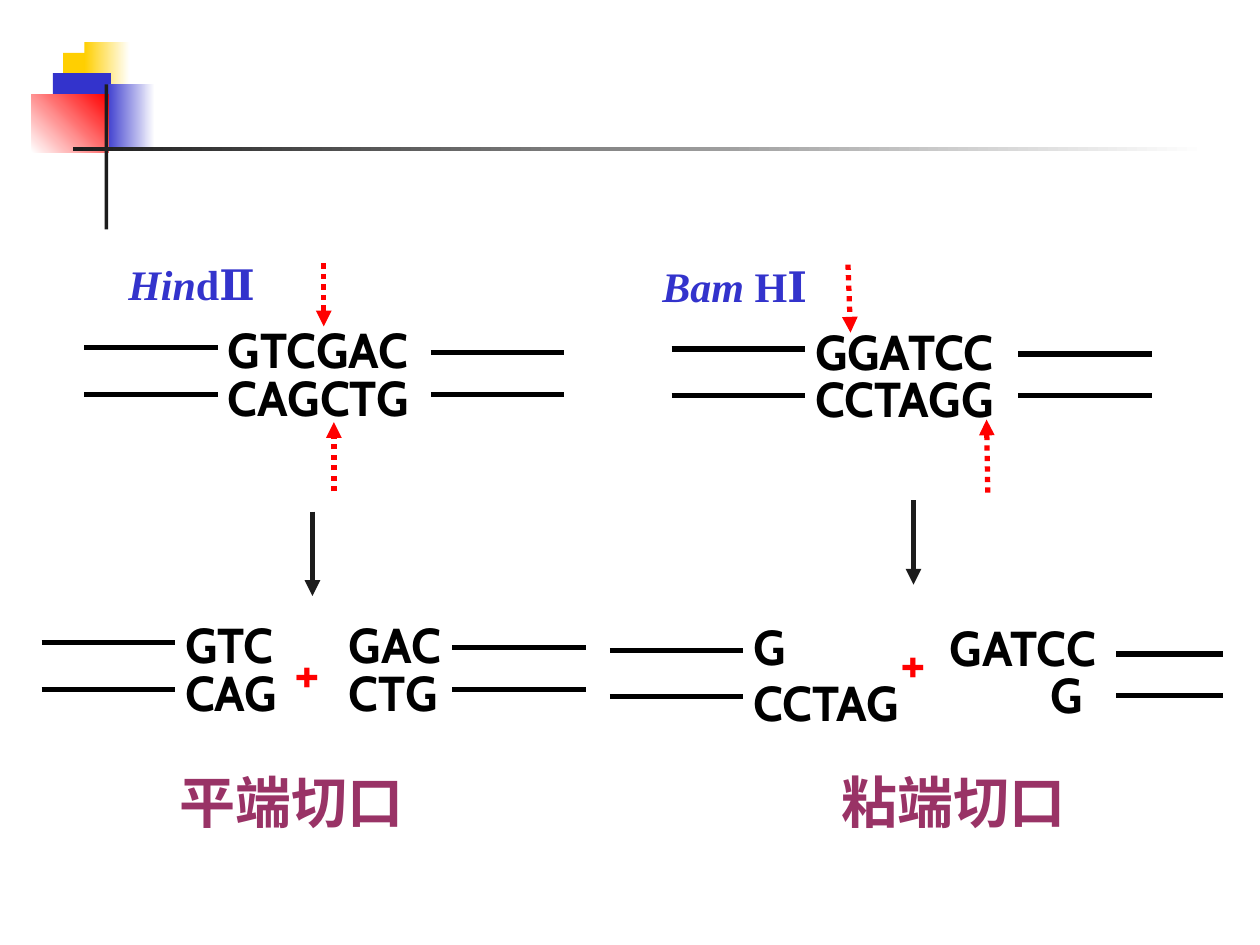
from dataclasses import dataclass
from typing import Optional

from lxml.etree import SubElement
from pptx import Presentation
from pptx.dml.color import RGBColor
from pptx.enum.dml import MSO_LINE_DASH_STYLE as Dash
from pptx.enum.shapes import MSO_CONNECTOR as Connector, MSO_SHAPE as Shape
from pptx.oxml.ns import qn
from pptx.util import Inches, Pt

COLUMNS, ROWS = 100, 75
SLIDE_WIDTH, SLIDE_HEIGHT = Inches(10), Inches(7.5)


@dataclass(frozen=True)
class Theme:
    yellow: str = "FFCF01"
    blue: str = "3333CC"
    red: str = "FF0000"
    white: str = "FFFFFF"
    dark: str = "1C1C1C"
    black: str = "000000"
    purple: str = "993366"
    serif: str = "Times New Roman"
    sequence_font: str = "Cabin"
    caption_font: str = "Noto Sans CJK JP"
    enzyme_size: int = 24
    sequence_size: int = 28
    large_size: int = 32
    line_width: int = 3


THEME = Theme()


@dataclass(frozen=True)
class Block:
    """A decorative rectangle; with an end colour it becomes a gradient."""
    left: float
    top: float
    width: float
    height: float
    color: str
    end_color: Optional[str] = None
    angle: int = 0


@dataclass(frozen=True)
class Duplex:
    """Two paired strands of bases, with bars for the DNA on either side."""
    left: float
    top: float
    width: float
    strands: tuple[str, str]
    spacing: tuple[float, float] = (1, 0.8)
    lower_indent: float = 0
    bar_length: float = 10.6
    left_bar_offset: Optional[float] = None
    right_bar_start: Optional[float] = None
    right_bar_offset: float = 3.1


@dataclass(frozen=True)
class Arrow:
    start: tuple[float, float]
    end: tuple[float, float]
    is_cut: bool = False


@dataclass(frozen=True)
class Label:
    left: float
    top: float
    width: float
    height: float
    wording: tuple[str, ...]
    font: str
    size: int
    color: str
    italic_first: bool = False


BLOCKS = (
    Block(5, 4.2, 4.8, 5.2, THEME.yellow),
    Block(6.7, 3.3, 3.6, 5.2, THEME.yellow, THEME.white),
    Block(4.2, 5.8, 4.6, 5.2, THEME.blue),
    Block(8.3, 6.7, 4, 5.2, THEME.blue, THEME.white),
    Block(2.5, 7.5, 6.1, 4.6, THEME.white, THEME.red, 45),
    Block(8.3, 6.7, 0.3, 11.5, THEME.dark),
    Block(5.8, 11.7, 90, 0.3, THEME.dark, THEME.white),
)

DUPLEXES = (
    Duplex(17.1, 24.9, 18.1, ("GTCGAC", "CAGCTG"), left_bar_offset=2.7, right_bar_start=17.1),
    Duplex(63.7, 25, 18.1, ("GGATCC", "CCTAGG"), left_bar_offset=2.7, right_bar_start=17.1),
    Duplex(13.7, 48.3, 10.2, ("GTC", "CAG"), left_bar_offset=2.7),
    Duplex(26.7, 48.3, 10.2, ("GAC", "CTG"), right_bar_start=9.2),
    Duplex(58.8, 50.1, 15.5, ("G", "CCTAG"), spacing=(0.6, 1), left_bar_offset=1.5),
    Duplex(74.4, 48.5, 15.2, ("GATCC", "G"), lower_indent=8, bar_length=8.5,
           right_bar_start=14.2, right_bar_offset=3.4),
)

ARROWS = (
    Arrow((25.7, 20.9), (25.7, 25.9), is_cut=True),
    Arrow((26.5, 39), (26.5, 33.5), is_cut=True),
    Arrow((67.3, 21), (67.5, 26.4), is_cut=True),
    Arrow((78.4, 39.1), (78.3, 33.3), is_cut=True),
    Arrow((24.8, 40.6), (24.8, 47.3)),
    Arrow((72.5, 39.7), (72.5, 46.4)),
)

ENZYME_STYLE = (THEME.serif, THEME.enzyme_size, THEME.blue, True)
PLUS_STYLE = (THEME.sequence_font, THEME.large_size, THEME.red)
CAPTION_STYLE = (THEME.caption_font, THEME.large_size, THEME.purple)
LABELS = (
    Label(9.2, 20, 12.6, 5, ("Hin", "dⅡ"), *ENZYME_STYLE),
    Label(51.6, 20.2, 15.3, 5, ("Bam ", "HⅠ"), *ENZYME_STYLE),
    Label(22.4, 50.1, 5.7, 6.3, ("+",), *PLUS_STYLE),
    Label(70.5, 49.3, 5.7, 6.3, ("+",), *PLUS_STYLE),
    Label(13.3, 60.4, 20, 6.3, ("平端切口",), *CAPTION_STYLE),
    Label(65.8, 60.4, 20, 6.3, ("粘端切口",), *CAPTION_STYLE),
)


def x(columns: float) -> int:
    return round(SLIDE_WIDTH * columns / COLUMNS)


def y(rows: float) -> int:
    return round(SLIDE_HEIGHT * rows / ROWS)


def draw_block(shapes, block: Block) -> None:
    shape = shapes.add_shape(Shape.RECTANGLE, x(block.left), y(block.top),
                             x(block.width), y(block.height))
    shape.shadow.inherit = False
    shape.line.fill.background()
    if block.end_color is None:
        shape.fill.solid()
        shape.fill.fore_color.rgb = RGBColor.from_string(block.color)
        return
    shape.fill.gradient()
    shape.fill.gradient_angle = block.angle
    for stop, color in zip(shape.fill.gradient_stops, (block.color, block.end_color)):
        stop.color.rgb = RGBColor.from_string(color)


def draw_line(shapes, start: tuple[float, float], end: tuple[float, float], color: str):
    connector = shapes.add_connector(Connector.STRAIGHT, x(start[0]), y(start[1]),
                                     x(end[0]), y(end[1]))
    connector.line.width = Pt(THEME.line_width)
    connector.line.color.rgb = RGBColor.from_string(color)
    SubElement(connector._element.spPr, qn("a:effectLst"))
    return connector


def draw_arrow(shapes, arrow: Arrow) -> None:
    color = THEME.red if arrow.is_cut else THEME.dark
    connector = draw_line(shapes, arrow.start, arrow.end, color)
    if arrow.is_cut:
        connector.line.dash_style = Dash.ROUND_DOT
    SubElement(connector._element.spPr.get_or_add_ln(), qn("a:tailEnd"), type="triangle")


def add_text_frame(shapes, left: float, top: float, width: float, height: float):
    frame = shapes.add_textbox(x(left), y(top), x(width), y(height)).text_frame
    frame.word_wrap = True
    return frame


def format_run(run, font: str, size: int, color: str) -> None:
    run.font.name = font
    run.font.size = Pt(size)
    run.font.bold = True
    run.font.color.rgb = RGBColor.from_string(color)
    if font == THEME.caption_font:
        SubElement(run._r.get_or_add_rPr(), qn("a:ea"), typeface=font)


def draw_duplex(shapes, duplex: Duplex) -> None:
    group = shapes.add_group_shape().shapes
    frame = add_text_frame(group, duplex.left, duplex.top, duplex.width, 9.4)
    frame.text = "\n".join(duplex.strands)
    for paragraph, spacing in zip(frame.paragraphs, duplex.spacing):
        paragraph.line_spacing = spacing
        format_run(paragraph.runs[0], THEME.sequence_font, THEME.sequence_size, THEME.black)
    if duplex.lower_indent:
        frame.paragraphs[1]._p.get_or_add_pPr().set("marL", str(x(duplex.lower_indent)))

    bars = []
    if duplex.left_bar_offset is not None:
        bars.append((-10.4, duplex.left_bar_offset, 3.7))
    if duplex.right_bar_start is not None:
        bars.append((duplex.right_bar_start, duplex.right_bar_offset, 3.3))
    for start, offset, gap in bars:
        left = duplex.left + start
        for top in (duplex.top + offset, duplex.top + offset + gap):
            draw_line(group, (left, top), (left + duplex.bar_length, top), THEME.black)


def draw_label(shapes, label: Label) -> None:
    frame = add_text_frame(shapes, label.left, label.top, label.width, label.height)
    for index, words in enumerate(label.wording):
        run = frame.paragraphs[0].add_run()
        run.text = words
        format_run(run, label.font, label.size, label.color)
        run.font.italic = label.italic_first and index == 0


def main() -> None:
    presentation = Presentation()
    presentation.slide_width, presentation.slide_height = SLIDE_WIDTH, SLIDE_HEIGHT
    shapes = presentation.slides.add_slide(presentation.slide_layouts[6]).shapes
    for items, draw in ((BLOCKS, draw_block), (DUPLEXES, draw_duplex),
                        (ARROWS, draw_arrow), (LABELS, draw_label)):
        for item in items:
            draw(shapes, item)
    presentation.save("out.pptx")


if __name__ == "__main__":
    main()
